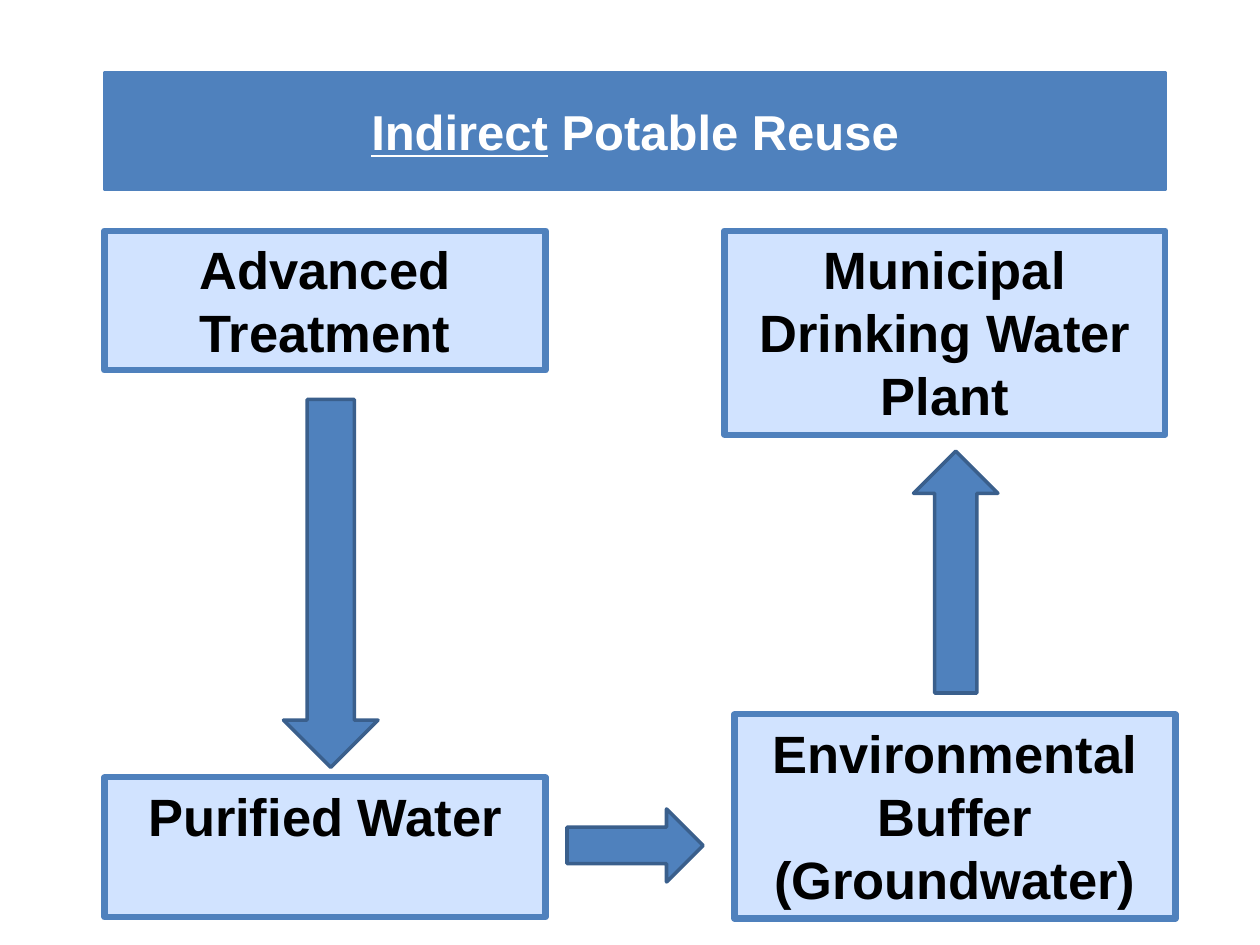
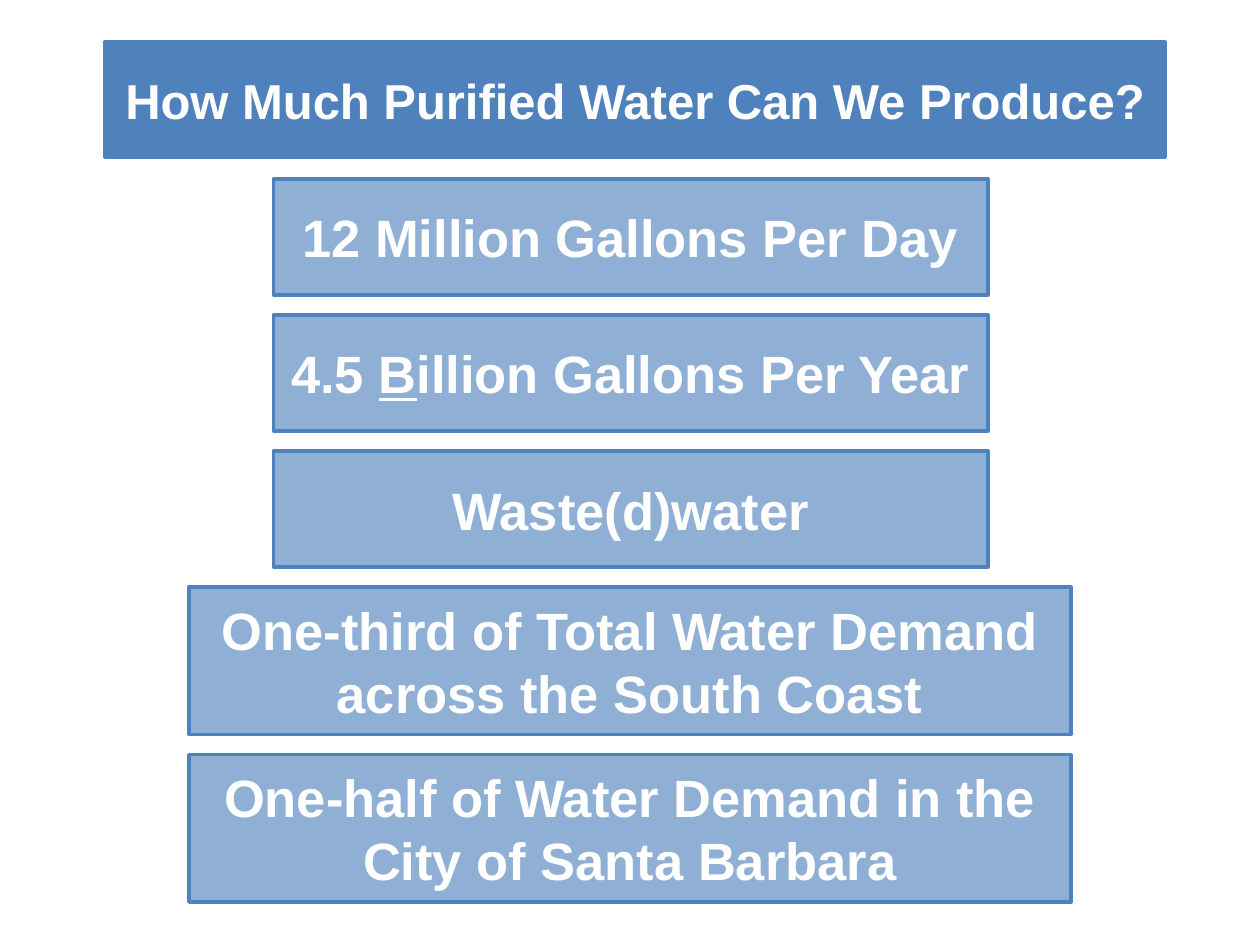
"""Build two slides on potable reuse and purified water supply."""
import pptx
import pptx.util
import pptx.dml.color
import pptx.enum.shapes
import pptx.enum.text

Inches = pptx.util.Inches
SHAPE = pptx.enum.shapes.MSO_SHAPE
ANCHOR = pptx.enum.text.MSO_ANCHOR
COLORS = {
    "blue": "4F81BD",
    "edge": "3A5F8C",
    "pale": "D1E3FF",
    "mid": "8FAFD5",
    "white": "FFFFFF",
    "black": "000000",
}
BAND = {"size": 28, "color": "white", "fill": "blue"}
STEP = {"color": "black", "fill": "pale", "weight": 3.5, "anchor": ANCHOR.TOP}
FACT = {"color": "white", "fill": "mid"}


def rgb(name):
    return pptx.dml.color.RGBColor.from_string(COLORS[name])


def add_block(s, text, box, kind=SHAPE.RECTANGLE, fill="blue", line="blue", weight=2,
              size=30, color="white", anchor=ANCHOR.MIDDLE):
    """Add a filled shape; text between underscores is underlined."""
    sp = s.shapes.add_shape(kind, *[Inches(v) for v in box])
    sp.shadow.inherit = False
    sp.fill.solid()
    sp.fill.fore_color.rgb = rgb(fill)
    sp.line.color.rgb = rgb(line)
    sp.line.width = pptx.util.Pt(weight)
    if text:
        tf = sp.text_frame
        tf.word_wrap = True
        tf.vertical_anchor = anchor
        p = tf.paragraphs[0]
        p.alignment = pptx.enum.text.PP_ALIGN.CENTER
        for i, part in enumerate(text.split("_")):
            if part:
                r = p.add_run()
                r.text = part
                r.font.name = "Arial"
                r.font.size = pptx.util.Pt(size)
                r.font.bold = True
                r.font.underline = i % 2 == 1
                r.font.color.rgb = rgb(color)
    return sp


prs = pptx.Presentation()
prs.slide_width = Inches(10)
prs.slide_height = Inches(7.5)
blank = prs.slide_layouts[6]

s = prs.slides.add_slide(blank)
add_block(s, "_Indirect_ Potable Reuse", (0.83, 0.58, 8.42, 0.92), **BAND)
steps = [
    ("Advanced Treatment", 0.83, 1.83, 1.11),
    ("Purified Water", 0.83, 6.17, 1.11),
    ("Environmental Buffer (Groundwater)", 5.83, 5.67, 1.62),
    ("Municipal Drinking Water Plant", 5.75, 1.83, 1.62),
]
for text, left, top, height in steps:
    add_block(s, text, (left, top, 3.5, height), **STEP)

arrows = [
    (SHAPE.DOWN_ARROW, (2.25, 3.17, 0.75, 2.92), 0),
    (SHAPE.RIGHT_ARROW, (4.5, 6.42, 1.08, 0.58), 0),
    (SHAPE.DOWN_ARROW, (7.25, 3.58, 0.67, 1.92), 180),
]
for kind, box, turn in arrows:
    sp = add_block(s, "", box, kind=kind, line="edge")
    sp.rotation = turn

s = prs.slides.add_slide(blank)
add_block(s, "How Much Purified Water Can We Produce?", (0.83, 0.33, 8.42, 0.92), **BAND)
facts = [
    ("12 Million Gallons Per Day", 2.17, 5.67, 0.92),
    ("4.5 _B_illion Gallons Per Year", 2.17, 5.67, 0.92),
    ("Waste(d)water", 2.17, 5.67, 0.92),
    ("One-third of Total Water Demand across the South Coast", 1.5, 7, 1.17),
    ("One-half of Water Demand in the City of Santa Barbara", 1.5, 7, 1.17),
]
top, gap = 1.42, 0.16
for text, left, width, height in facts:
    add_block(s, text, (left, top, width, height), **FACT)
    top += height + gap

prs.save("out.pptx")
